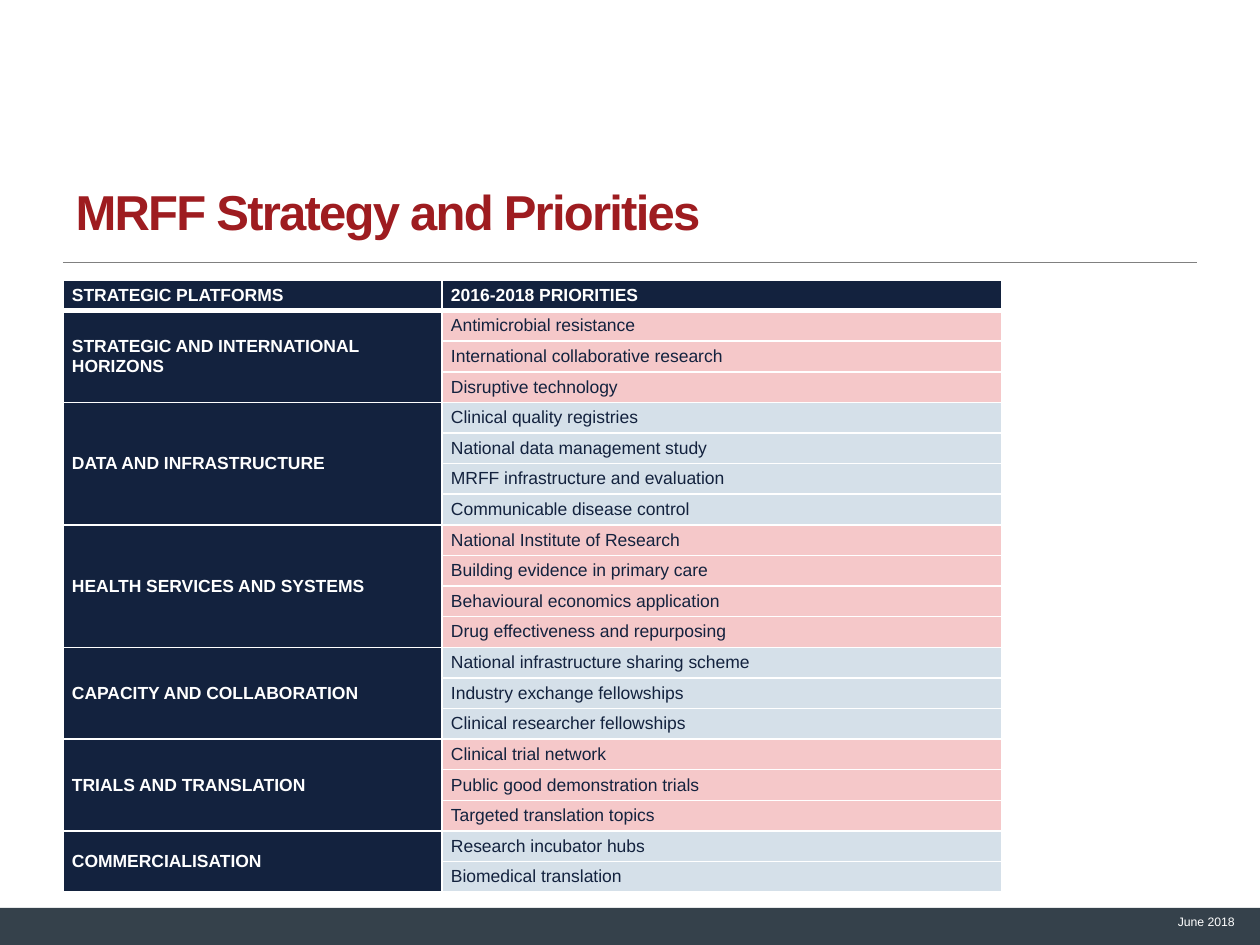
from lxml import etree
from pptx import Presentation
from pptx.dml.color import RGBColor
from pptx.enum.shapes import MSO_CONNECTOR, MSO_SHAPE
from pptx.enum.text import MSO_ANCHOR, PP_ALIGN
from pptx.oxml.ns import qn
from pptx.util import Pt

PX = 914400 // 126
LINE = MSO_CONNECTOR.STRAIGHT
RECT = MSO_SHAPE.RECTANGLE
BOTTOM, MIDDLE, TOP = MSO_ANCHOR.BOTTOM, MSO_ANCHOR.MIDDLE, MSO_ANCHOR.TOP
LEFT, RIGHT = PP_ALIGN.LEFT, PP_ALIGN.RIGHT

WHITE = RGBColor(0xFF, 0xFF, 0xFF)
NAVY = RGBColor(0x13, 0x22, 0x3E)
RED = RGBColor(0x9E, 0x1C, 0x20)
PINK = RGBColor(0xF5, 0xC8, 0xC9)
BLUE = RGBColor(0xD5, 0xE0, 0xE9)
SLATE = RGBColor(0x35, 0x41, 0x4B)
GREY = RGBColor(0x80, 0x80, 0x80)

HEADER = ("STRATEGIC PLATFORMS", "2016-2018 PRIORITIES")
PLATFORMS = [
    ("STRATEGIC AND INTERNATIONAL HORIZONS", [
        "Antimicrobial resistance", "International collaborative research",
        "Disruptive technology"]),
    ("DATA AND INFRASTRUCTURE", [
        "Clinical quality registries", "National data management study",
        "MRFF infrastructure and evaluation", "Communicable disease control"]),
    ("HEALTH SERVICES AND SYSTEMS", [
        "National Institute of Research", "Building evidence in primary care",
        "Behavioural economics application", "Drug effectiveness and repurposing"]),
    ("CAPACITY AND COLLABORATION", [
        "National infrastructure sharing scheme", "Industry exchange fellowships",
        "Clinical researcher fellowships"]),
    ("TRIALS AND TRANSLATION", [
        "Clinical trial network", "Public good demonstration trials",
        "Targeted translation topics"]),
    ("COMMERCIALISATION", ["Research incubator hubs", "Biomedical translation"]),
]


def px(*values):
    return [v * PX for v in values]


def set_attrs(obj, values):
    for name, value in values.items():
        setattr(obj, name, value)


def write(tf, text, size, color, bold=False, align=LEFT, **spacing):
    p = tf.paragraphs[0]
    set_attrs(p, {"alignment": align, **spacing})
    r = p.add_run()
    r.text = text
    set_attrs(r.font, {"name": "Arial", "size": Pt(size), "bold": bold})
    r.font.color.rgb = color
    return r


def add_bar(s, box, color):
    sp = s.shapes.add_shape(RECT, *px(*box))
    sp.shadow.inherit = False
    sp.fill.solid()
    sp.fill.fore_color.rgb = color
    sp.line.fill.background()


def add_rule(s, ends, color, width):
    cn = s.shapes.add_connector(LINE, *px(*ends))
    cn.line.color.rgb = color
    cn.line.width = Pt(width)
    etree.SubElement(cn._element.spPr, qn("a:effectLst"))


def set_title(s, box, text):
    sp = s.shapes.title
    set_attrs(sp, dict(zip(("left", "top", "width", "height"), px(*box))))
    set_attrs(sp.text_frame, {"vertical_anchor": BOTTOM, "word_wrap": True})
    r = write(sp.text_frame, text, 28, RED, bold=True)
    r.font._element.set("spc", "-100")


def add_label(s, box, text, size, color):
    tf = s.shapes.add_textbox(*px(*box)).text_frame
    set_attrs(tf, {"word_wrap": True, "vertical_anchor": TOP})
    write(tf, text, size, color, align=RIGHT)


def set_borders(cell, widths):
    tcPr = cell._tc.get_or_add_tcPr()
    for side, width in zip("LRTB", widths):
        ln = etree.SubElement(tcPr, qn(f"a:ln{side}"), w=str(Pt(width)))
        fill = etree.SubElement(ln, qn("a:solidFill"))
        etree.SubElement(fill, qn("a:srgbClr"), val=str(WHITE))


def format_cell(cell, fill, borders):
    set_borders(cell, borders)
    cell.fill.solid()
    cell.fill.fore_color.rgb = fill
    set_attrs(cell, {"vertical_anchor": MIDDLE, "margin_left": 9 * PX,
                     "margin_right": 9 * PX, "margin_top": 0, "margin_bottom": 0})


def write_cell(cell, text, color, bold):
    write(cell.text_frame, text, 10, color, bold,
          space_before=Pt(2), space_after=Pt(2))


def add_priorities(s, box, col_widths):
    count = 1 + sum(len(priorities) for _, priorities in PLATFORMS)
    table = s.shapes.add_table(count, 2, *px(*box)).table
    table.horz_banding = False
    for col, width in zip(table.columns, px(*col_widths)):
        col.width = width
    for row in table.rows:
        row.height = box[3] * PX // count
    for c, text in enumerate(HEADER):
        format_cell(table.cell(0, c), NAVY, (1, 1, 1, 3))
        write_cell(table.cell(0, c), text, WHITE, True)
    first = 1
    for i, (platform, priorities) in enumerate(PLATFORMS):
        for r, text in enumerate(priorities, first):
            borders = (1, 1, 3 if r == 1 else 1, 1)
            format_cell(table.cell(r, 0), NAVY, borders)
            format_cell(table.cell(r, 1), BLUE if i % 2 else PINK, borders)
            write_cell(table.cell(r, 1), text, NAVY, False)
        table.cell(first, 0).merge(table.cell(r, 0))
        write_cell(table.cell(first, 0), platform, WHITE, True)
        first = r + 1


def main():
    prs = Presentation()
    prs.slide_width, prs.slide_height = px(1260, 945)
    s = prs.slides.add_slide(prs.slide_layouts[5])
    add_bar(s, (0, 908, 1260, 37), SLATE)
    add_rule(s, (63, 262, 1197, 262), GREY, 0.5)
    set_title(s, (63, 111, 1134, 136), "MRFF Strategy and Priorities")
    add_priorities(s, (63, 280, 939, 613), (379, 560))
    add_label(s, (1103, 908, 144, 34), "June 2018", 7, WHITE)
    prs.save("out.pptx")


if __name__ == "__main__":
    main()
